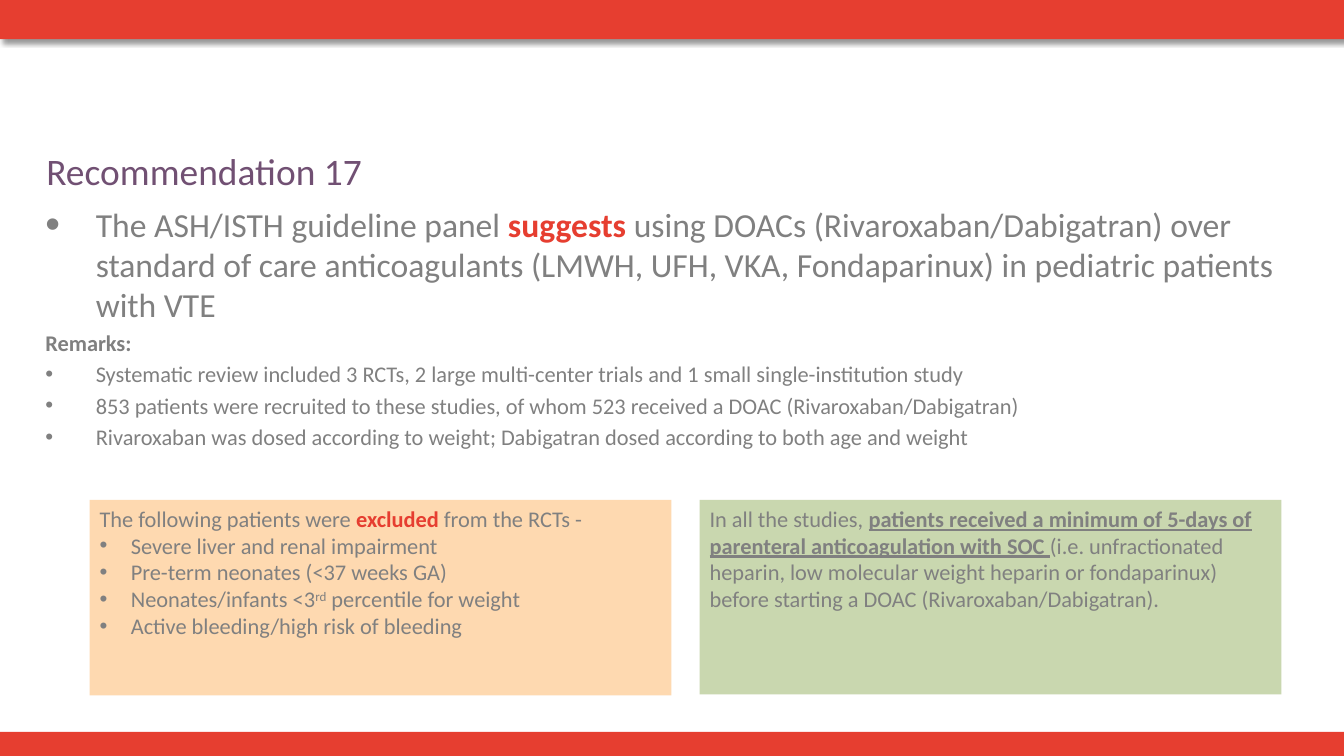
from lxml.etree import SubElement
from pptx import Presentation
from pptx.dml.color import RGBColor
from pptx.enum.shapes import MSO_SHAPE
from pptx.enum.text import MSO_ANCHOR, PP_ALIGN
from pptx.oxml.ns import qn
from pptx.util import Inches, Pt

RED, PURPLE, GREY = "E63E30", "715073", "808080"
ORANGE, GREEN = "FED9B0", "C9D7AF"
SLIDE_W, SLIDE_H = 13.33, 7.5

# A run is (text, format); a paragraph is a dict of its runs and settings.
STRONG = {"bold": True, "color": RED}
TITLE = [{"runs": [("Recommendation 17", {"color": PURPLE})], "size": 26.7}]
REMARKS = [
    "Systematic review included 3 RCTs, 2 large multi-center trials and 1 small single-institution study",
    "853 patients were recruited to these studies, of whom 523 received a DOAC (Rivaroxaban/Dabigatran)",
    "Rivaroxaban was dosed according to weight; Dabigatran dosed according to both age and weight",
]
BODY = [
    {"runs": [("The ASH/ISTH guideline panel ", {}),
              ("suggests", STRONG),
              (" using DOACs (Rivaroxaban/Dabigatran) over standard of care anticoagulants "
               "(LMWH, UFH, VKA, Fondaparinux) in pediatric patients with VTE", {})],
     "size": 24, "indent": 0.5, "bullet_pct": 125},
    {"runs": [("Remarks:", {"bold": True})], "before": 3.2},
] + [{"runs": [(text, {})], "indent": 0.5, "before": 3.2} for text in REMARKS]
EXCLUSIONS = [
    [("Severe liver and renal impairment", {})],
    [("Pre-term neonates (<37 weeks GA)", {})],
    [("Neonates/infants <3", {}), ("rd", {"baseline": 30}), (" percentile for weight", {})],
    [("Active bleeding/high risk of bleeding", {})],
]
EXCLUDED = [
    {"runs": [("The following patients were ", {}), ("excluded", STRONG),
              (" from the RCTs -", {})]},
] + [{"runs": runs, "indent": 0.31} for runs in EXCLUSIONS]
TREATMENT = [
    {"runs": [("In all the studies, ", {}),
              ("patients received a minimum of 5-days of parenteral anticoagulation with SOC ",
               {"bold": True, "underline": True}),
              ("(i.e. unfractionated heparin, low molecular weight heparin or fondaparinux) "
               "before starting a DOAC (Rivaroxaban/Dabigatran).", {})]},
]
BARS = [(7.26, 0.24, False), (-0.01, 0.4, True)]  # top, height, shadow
TEXTS = [(TITLE, (0.46, 1.47, 12, 0.5)), (BODY, (0.45, 2.02, 12.38, 2.7))]
PANELS = [(EXCLUDED, ORANGE, 1.94), (TREATMENT, GREEN, 1.93)]
PANEL_LEFT, PANEL_TOP, PANEL_W, PANEL_GAP = 0.89, 4.96, 5.77, 0.28


def rgb(value):
    return RGBColor.from_string(value)


def add_bullet(p, indent, percent):
    pPr = p._p.get_or_add_pPr()
    pPr.set("marL", str(Inches(indent)))
    pPr.set("indent", str(-Inches(indent)))
    if percent:
        SubElement(pPr, qn("a:buSzPct")).set("val", str(percent * 1000))
    SubElement(pPr, qn("a:buFont")).set("typeface", "Arial")
    SubElement(pPr, qn("a:buChar")).set("char", "•")


def add_run(p, text, size, fmt):
    r = p.add_run()
    r.text = text
    style = {"name": "Calibri", "size": Pt(size), "bold": False}
    style.update((k, v) for k, v in fmt.items() if k in ("bold", "underline"))
    for key, value in style.items():
        setattr(r.font, key, value)
    r.font.color.rgb = rgb(fmt.get("color", GREY))
    if "baseline" in fmt:
        r.font._element.set("baseline", str(fmt["baseline"] * 1000))


def write(tf, paragraphs):
    tf.word_wrap = True
    tf.vertical_anchor = MSO_ANCHOR.TOP
    for i, item in enumerate(paragraphs):
        p = tf.add_paragraph() if i else tf.paragraphs[0]
        if "indent" in item:
            add_bullet(p, item["indent"], item.get("bullet_pct"))
        p.alignment = PP_ALIGN.LEFT
        p.space_before = Pt(item.get("before", 0))
        for text, fmt in item["runs"]:
            add_run(p, text, item.get("size", 16), fmt)


def add_rect(slide, box, fill):
    sp = slide.shapes.add_shape(MSO_SHAPE.RECTANGLE, *map(Inches, box))
    sp.shadow.inherit = False
    sp.fill.solid()
    sp.fill.fore_color.rgb = rgb(fill)
    sp.line.fill.background()
    return sp


def add_shadow(sp):
    effects = sp._element.spPr.find(qn("a:effectLst"))
    shadow = SubElement(effects, qn("a:outerShdw"), blurRad=str(Pt(4)), dist=str(Pt(3)),
                        dir=str(45 * 60000), algn="tl", rotWithShape="0")
    color = SubElement(shadow, qn("a:srgbClr"), val="000000")
    SubElement(color, qn("a:alpha"), val="40000")


def main():
    prs = Presentation()
    prs.slide_width, prs.slide_height = Inches(SLIDE_W), Inches(SLIDE_H)
    s = prs.slides.add_slide(prs.slide_layouts[6])
    for top, height, shadow in BARS:
        bar = add_rect(s, (0, top, SLIDE_W, height), RED)
        if shadow:
            add_shadow(bar)
    for paragraphs, box in TEXTS:
        tf = s.shapes.add_textbox(*map(Inches, box)).text_frame
        for side in ("left", "top", "right", "bottom"):
            setattr(tf, f"margin_{side}", 0)
        write(tf, paragraphs)
    for i, (paragraphs, fill, height) in enumerate(PANELS):
        left = PANEL_LEFT + i * (PANEL_W + PANEL_GAP)
        panel = add_rect(s, (left, PANEL_TOP, PANEL_W, height), fill)
        write(panel.text_frame, paragraphs)
    prs.save("out.pptx")


if __name__ == "__main__":
    main()
